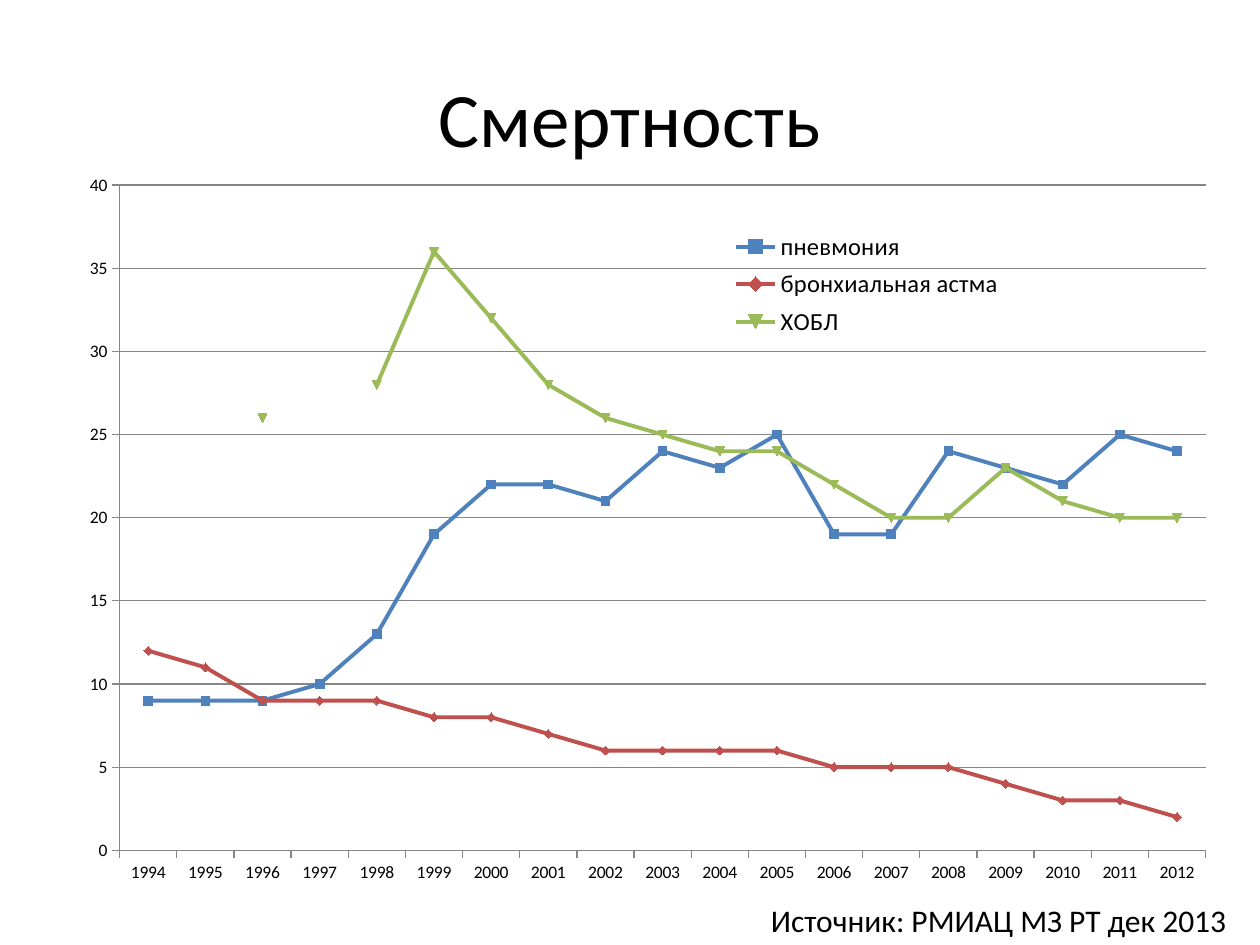
from lxml import etree
from pptx import Presentation
from pptx.chart.data import CategoryChartData
from pptx.dml.color import RGBColor
from pptx.enum.chart import XL_CHART_TYPE, XL_LEGEND_POSITION, XL_MARKER_STYLE, XL_TICK_MARK
from pptx.enum.text import MSO_ANCHOR, PP_ALIGN
from pptx.oxml.ns import qn
from pptx.util import Inches, Pt

BLACK = RGBColor(0x00, 0x00, 0x00)
GRAY = RGBColor(0x86, 0x86, 0x86)
BLUE = RGBColor(0x4F, 0x81, 0xBD)
RED = RGBColor(0xC0, 0x50, 0x4D)
GREEN = RGBColor(0x9B, 0xBB, 0x59)
FONT = "Calibri"
CHART_W, CHART_H = 9.06, 5.79

YEARS = range(1994, 2013)
SERIES = [
    ("пневмония", BLUE, [9, 9, 9, 10, 13, 19, 22, 22, 21, 24,
                         23, 25, 19, 19, 24, 23, 22, 25, 24]),
    ("бронхиальная астма", RED, [12, 11, 9, 9, 9, 8, 8, 7, 6, 6,
                                 6, 6, 5, 5, 5, 4, 3, 3, 2]),
    ("ХОБЛ", GREEN, [None, None, 26, None, 28, 36, 32, 28, 26, 25,
                     24, 24, 22, 20, 20, 23, 21, 20, 20]),
]


def add_text(p, text, size):
    r = p.add_run()
    r.text = text
    r.font.size, r.font.name = Pt(size), FONT
    r.font.color.rgb = BLACK


def manual_layout(x, y, w, h, inner=False):
    """Lay out a chart part, given in inches from the chart's corner."""
    layout = etree.Element(qn("c:layout"))
    manual = etree.SubElement(layout, qn("c:manualLayout"))
    settings = [("layoutTarget", "inner")] if inner else []
    settings += [("xMode", "edge"), ("yMode", "edge"),
                 ("x", x / CHART_W), ("y", y / CHART_H),
                 ("w", w / CHART_W), ("h", h / CHART_H)]
    for tag, val in settings:
        etree.SubElement(manual, qn(f"c:{tag}")).set("val", str(val))
    return layout


prs = Presentation()
prs.slide_width, prs.slide_height = Inches(10), Inches(7.5)
s = prs.slides.add_slide(prs.slide_layouts[5])

# Title
title = s.shapes.title
title.left, title.top = Inches(0.5), Inches(0.3)
title.width, title.height = Inches(9), Inches(1.25)
tf = title.text_frame
tf.vertical_anchor = MSO_ANCHOR.MIDDLE
p = tf.paragraphs[0]
p.alignment = PP_ALIGN.CENTER
add_text(p, "Смертность", 44)

# Source line
source = s.shapes.add_textbox(Inches(6.02), Inches(7.1), Inches(3.86), Inches(0.4))
source.text_frame.word_wrap = False
add_text(source.text_frame.paragraphs[0], "Источник: РМИАЦ МЗ РТ дек 2013", 18)

# Mortality chart
data = CategoryChartData()
data.categories = [str(year) for year in YEARS]
for name, color, values in SERIES:
    data.add_series(name, values)
chart = s.shapes.add_chart(XL_CHART_TYPE.LINE_MARKERS, Inches(0.59), Inches(1.31),
                           Inches(CHART_W), Inches(CHART_H), data).chart
chart.has_title = False
chart.font.size, chart.font.name = Pt(10), FONT
chart.font.color.rgb = BLACK

# Lines and markers
plot = chart.plots[0]
plot.vary_by_categories = False
for ser, (name, color, values) in zip(plot.series, SERIES):
    ser.smooth = False
    ser.format.line.color.rgb = color
    ser.format.line.width = Pt(2.25)
    ser.marker.style = XL_MARKER_STYLE.AUTOMATIC
    ser.marker.size = 5
    ser.marker.format.fill.solid()
    ser.marker.format.fill.fore_color.rgb = color
    ser.marker.format.line.color.rgb = color

# Axes and gridlines
value_axis = chart.value_axis
value_axis.minimum_scale, value_axis.maximum_scale = 0, 40
value_axis.major_unit = 5
value_axis.has_major_gridlines = True
for axis in (chart.category_axis, value_axis):
    axis.major_tick_mark = XL_TICK_MARK.OUTSIDE
for part in (chart.category_axis, value_axis, value_axis.major_gridlines):
    part.format.line.color.rgb = GRAY
    part.format.line.width = Pt(0.75)

# Legend
chart.has_legend = True
legend = chart.legend
legend.position = XL_LEGEND_POSITION.RIGHT
legend.include_in_layout = False
legend.font.size, legend.font.name = Pt(14), FONT
legend.font.color.rgb = BLACK

# Fixed places of the plot area and the legend
area = chart.element.find(".//" + qn("c:plotArea"))
legend_xml = chart.element.find(".//" + qn("c:legend"))
for parent in (area, legend_xml):
    for old in parent.findall(qn("c:layout")):
        parent.remove(old)
area.insert(0, manual_layout(0.36, 0.16, 8.62, 5.28, inner=True))
legend_xml.find(qn("c:legendPos")).addnext(manual_layout(5.11, 0.47, 2.36, 0.95))

prs.save("out.pptx")
